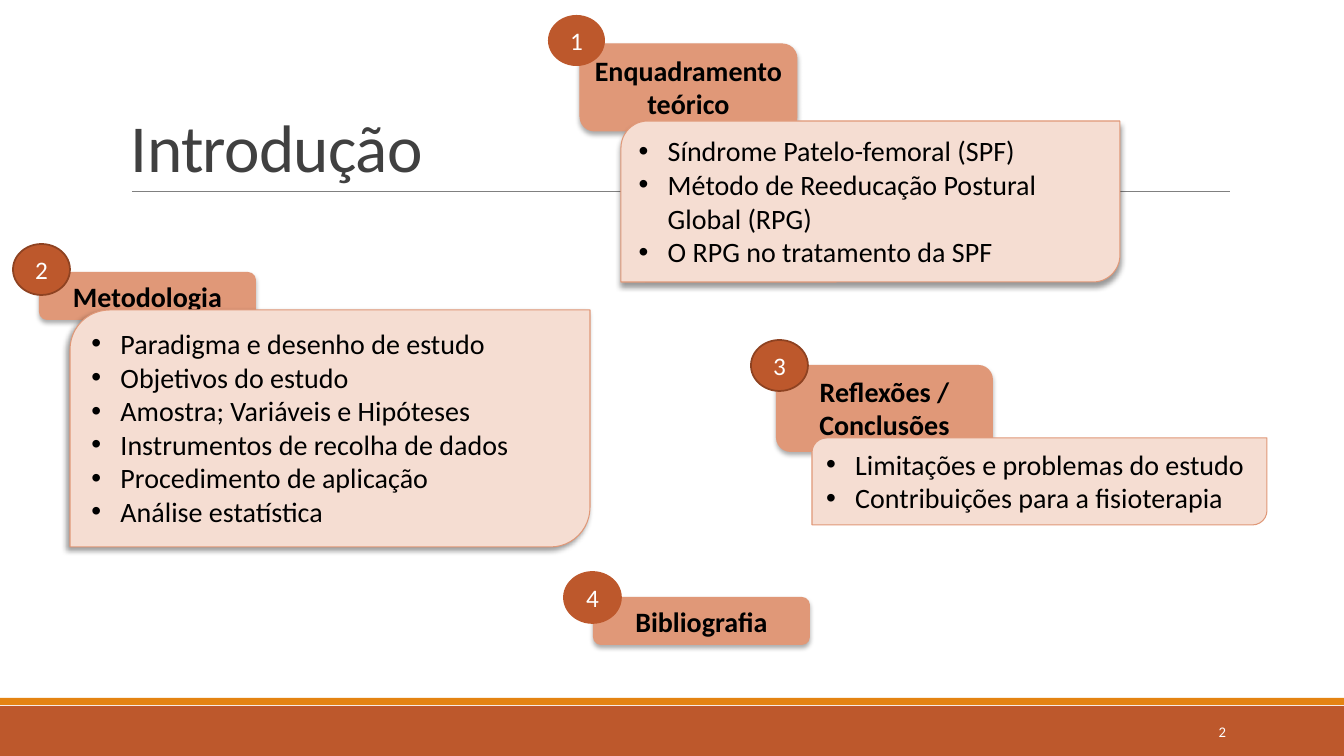
from lxml import etree
from pptx import Presentation, util as u
from pptx.dml.color import RGBColor
from pptx.enum import shapes, text
from pptx.oxml.ns import qn

PX = u.Inches(1) / 100.8
COLORS = {"band": "BD582C", "stripe": "E48312", "rule": "808080", "title": "404040",
          "heading": "E09878", "panel": "F5DDD2", "rim": "8E4221",
          "ink": "000000", "light": "FFFFFF"}
FORMATS = {
    "title": dict(size=u.Pt(48), bold=False, color="title", align="LEFT", anchor="BOTTOM"),
    "page": dict(size=u.Pt(10.5), bold=False, color="light", align="RIGHT", anchor="MIDDLE"),
    "heading": dict(size=u.Pt(20), bold=True, color="ink", align="CENTER", anchor="TOP"),
    "panel": dict(size=u.Pt(20), bold=False, color="ink", align="LEFT", anchor="TOP"),
    "badge": dict(size=u.Pt(18), bold=False, color="light", align="CENTER", anchor="MIDDLE"),
}
KIND = shapes.MSO_SHAPE

prs = Presentation()
prs.slide_width, prs.slide_height = round(1344 * PX), round(756 * PX)
slide = prs.slides.add_slide(prs.slide_layouts[6])


def add_block(kind, box, fill=None, line=None, width=0.75, shadow=None):
    """Add a preset shape, or a text box when kind is None."""
    emu = [round(v * PX) for v in box]
    if kind is None:
        return slide.shapes.add_textbox(*emu)
    block = slide.shapes.add_shape(kind, *emu)
    block.shadow.inherit = False
    block.fill.solid()
    block.fill.fore_color.rgb = RGBColor.from_string(COLORS[fill])
    if line:
        block.line.color.rgb = RGBColor.from_string(COLORS[line])
        block.line.width = u.Pt(width)
    else:
        block.line.fill.background()
    if shadow:
        alpha, blur, dist, angle = shadow
        effects = block._element.spPr.find(qn("a:effectLst"))
        outer = etree.SubElement(effects, qn("a:outerShdw"), blurRad=str(u.Pt(blur)),
                                 dist=str(u.Pt(dist)), dir=str(angle * 60000), rotWithShape="0")
        tint = etree.SubElement(outer, qn("a:srgbClr"), val=COLORS["ink"])
        etree.SubElement(tint, qn("a:alpha"), val=str(alpha * 1000))
    return block


def write(block, lines, style):
    """Fill a block with paragraphs in one of the FORMATS; panels get bullets."""
    look = FORMATS[style]
    frame = block.text_frame
    frame.word_wrap = True
    frame.vertical_anchor = getattr(text.MSO_ANCHOR, look["anchor"])
    if style in ("heading", "panel"):
        frame.auto_size = text.MSO_AUTO_SIZE.SHAPE_TO_FIT_TEXT
    frame.text = "\n".join(lines)
    for para in frame.paragraphs:
        para.alignment = getattr(text.PP_ALIGN, look["align"])
        font = para.runs[0].font
        for key, value in dict(name="Calibri", size=look["size"], bold=look["bold"]).items():
            setattr(font, key, value)
        font.color.rgb = RGBColor.from_string(COLORS[look["color"]])
        if style == "panel":
            props = para._p.get_or_add_pPr()
            props.set("marL", str(round(29 * PX)))
            props.set("indent", str(round(-29 * PX)))
            etree.SubElement(props, qn("a:buFont"), typeface="Arial")
            etree.SubElement(props, qn("a:buChar"), char="•")


# Footer bands and title rule
add_block(KIND.RECTANGLE, (0, 706, 1344, 50), "band")
add_block(KIND.RECTANGLE, (0, 698, 1344, 7), "stripe")
rule = slide.shapes.add_connector(shapes.MSO_CONNECTOR.STRAIGHT,
                                  *[round(v * PX) for v in (132, 191, 1230, 191)])
rule.line.color.rgb = RGBColor.from_string(COLORS["rule"])
rule.line.width = u.Pt(0.5)
etree.SubElement(rule._element.spPr, qn("a:effectLst"))

# Title and page number
title = add_block(None, (121, 31, 1109, 160))
write(title, ["Introdução"], "title")
title_line = title.text_frame.paragraphs[0]
title_line.line_spacing = 0.85
title_line.runs[0].font._element.set("spc", "-50")
write(add_block(None, (1092, 712, 144, 40)), ["2"], "page")

# Topic headings
for topic, left, top, height, line in [
        ("Enquadramento teórico", 580, 44, 87, "heading"),
        ("Reflexões / Conclusões", 776, 365, 87, None),
        ("Metodologia", 39, 272, 48, None),
        ("Bibliografia", 593, 597, 48, None)]:
    heading = add_block(KIND.ROUNDED_RECTANGLE, (left, top, 217, height), "heading", line,
                        shadow=(32, 3.5, 2.2, 90))
    write(heading, [topic], "heading")

# Topic contents
for box, shadow, points in [
        ((621, 121, 499, 161), (40, 4, 3, 90),
         ["Síndrome Patelo-femoral (SPF)", "Método de Reeducação Postural Global (RPG)",
          "O RPG no tratamento da SPF"]),
        ((70, 310, 520, 237), (40, 4, 3, 135),
         ["Paradigma e desenho de estudo", "Objetivos do estudo",
          "Amostra; Variáveis e Hipóteses", "Instrumentos de recolha de dados",
          "Procedimento de aplicação", "Análise estatística"]),
        ((812, 438, 455, 87), None,
         ["Limitações e problemas do estudo", "Contribuições para a fisioterapia"])]:
    panel = add_block(KIND.ROUND_2_DIAG_RECTANGLE, box, "panel", "heading", shadow=shadow)
    write(panel, points, "panel")

# Numbered badges
for number, left, top, line in [("1", 548, 15, None), ("4", 564, 572, "band"),
                                ("2", 13, 244, "rim"), ("3", 751, 340, "rim")]:
    badge = add_block(KIND.OVAL, (left, top, 57, 51), "band", line, 1.25)
    write(badge, [number], "badge")

prs.save("out.pptx")
